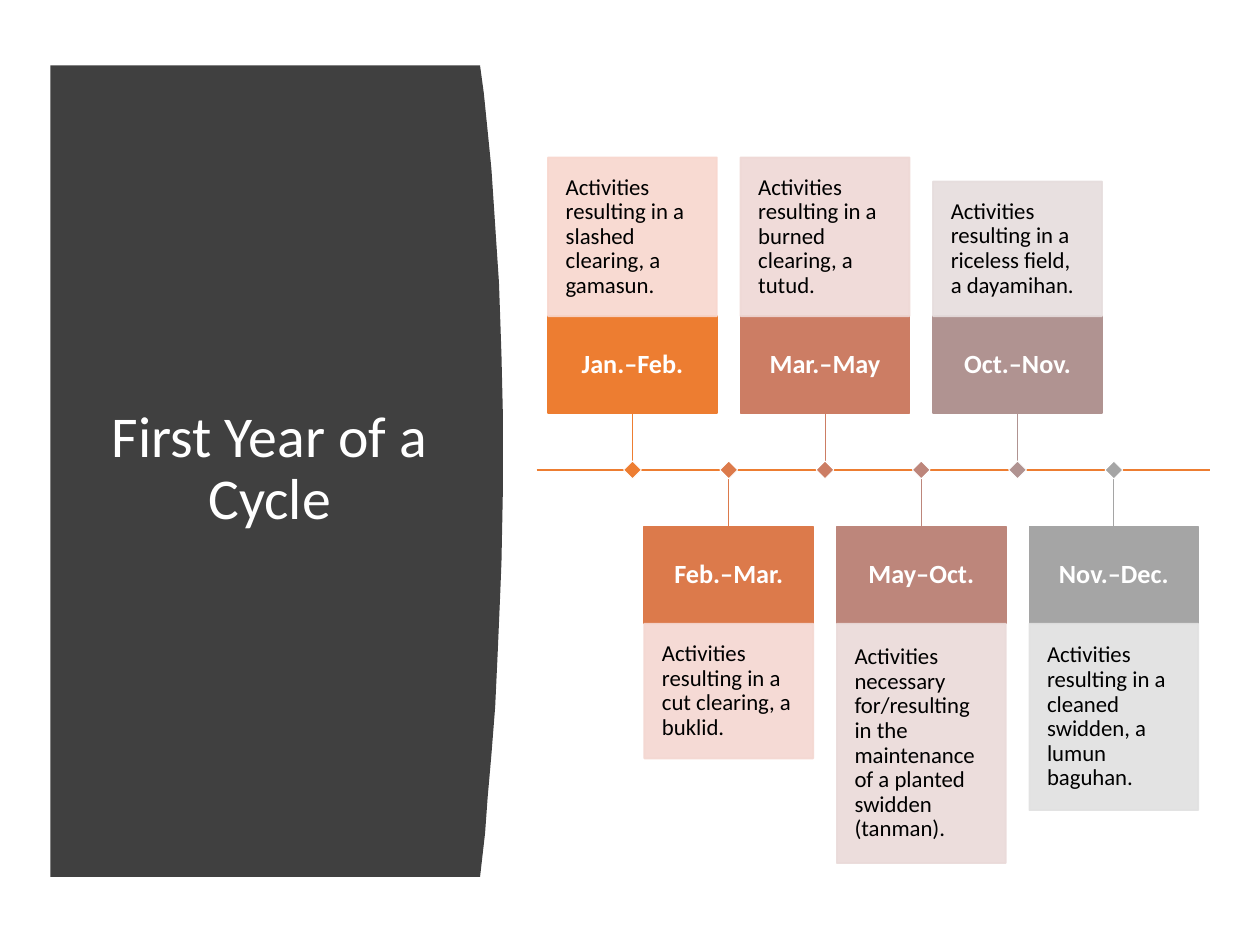
from lxml import etree
from pptx import Presentation
from pptx.dml.color import RGBColor
from pptx.enum.shapes import MSO_CONNECTOR, MSO_SHAPE
from pptx.enum.text import MSO_ANCHOR, PP_ALIGN
from pptx.oxml.ns import qn
from pptx.util import Inches, Pt

RECTANGLE = MSO_SHAPE.RECTANGLE
STRAIGHT = MSO_CONNECTOR.STRAIGHT
MIDDLE = MSO_ANCHOR.MIDDLE
LEFT, CENTER = PP_ALIGN.LEFT, PP_ALIGN.CENTER
TITLE_ONLY = 5
BOTTOM_SIDE, TOP_SIDE = 2, 0

AXIS_Y = 3.73
FIRST_LEFT, LAST_LEFT = 4.35, 8.17
CARD_WIDTH, HEADER_HEIGHT = 1.34, 0.77
UPPER_HEADER_TOP, LOWER_HEADER_TOP = 2.51, 4.18
MARKER_SIZE = 0.1

# period, activity, header colour, body colour, body height
STAGES = [
    ("Jan.–Feb.", "Activities resulting in a slashed clearing, a gamasun.", "ED7D31", "F8D7CE", 1.26),
    ("Feb.–Mar.", "Activities resulting in a cut clearing, a buklid.", "DC7A4B", "F4D7D1", 1.07),
    ("Mar.–May", "Activities resulting in a burned clearing, a tutud.", "CC7D64", "EFD8D5", 1.26),
    ("May–Oct.", "Activities necessary for/resulting in the maintenance of a planted swidden (tanman).",
     "BD867B", "EADAD9", 1.9),
    ("Oct.–Nov.", "Activities resulting in a riceless field, a dayamihan.", "B09391", "E6DDDD", 1.07),
    ("Nov.–Dec.", "Activities resulting in a cleaned swidden, a lumun baguhan.", "A5A5A5", "E1E1E1", 1.48),
]
PANEL_OUTLINE = [
    (0.4, 0.52), (3.81, 0.52), (3.84, 0.74), (3.87, 1.04), (3.9, 1.34), (3.92, 1.64),
    (3.94, 1.94), (3.96, 2.24), (3.97, 2.53), (3.98, 2.82), (3.99, 3.25), (3.99, 3.94),
    (3.98, 4.46), (3.97, 4.71), (3.95, 5.18), (3.93, 5.61), (3.9, 5.99), (3.87, 6.33),
    (3.85, 6.61), (3.81, 6.96), (0.4, 6.96),
]


def color(value):
    return RGBColor.from_string(value)


def write_text(shape, text, size, font_color, align=CENTER, bold=False, inset=0.1):
    frame = shape.text_frame
    frame.word_wrap = True
    frame.vertical_anchor = MIDDLE
    frame.margin_left = frame.margin_right = Inches(inset)
    frame.margin_top = frame.margin_bottom = Inches(inset)
    paragraph = frame.paragraphs[0]
    paragraph.alignment = align
    paragraph.line_spacing = 0.9
    run = paragraph.add_run()
    run.text = text
    run.font.name = "Calibri"
    run.font.size = Pt(size)
    run.font.bold = bold
    run.font.color.rgb = color(font_color)


presentation = Presentation()
presentation.slide_width = Inches(10)
presentation.slide_height = Inches(7.5)
slide = presentation.slides.add_slide(presentation.slide_layouts[TITLE_ONLY])
shapes = slide.shapes

# Title on a dark panel with a curved edge
outline = [(Inches(x), Inches(y)) for x, y in PANEL_OUTLINE]
builder = shapes.build_freeform(*outline[0])
builder.add_line_segments(outline[1:], close=True)
panel = builder.convert_to_shape()
panel.shadow.inherit = False
panel.fill.solid()
panel.fill.fore_color.rgb = color("404040")
panel.line.fill.background()

title = shapes.title
title._element.addprevious(panel._element)
title.left, title.top = Inches(0.71), Inches(1.11)
title.width, title.height = Inches(2.8), Inches(5.24)
write_text(title, "First Year of a Cycle", 33, "FFFFFF")
title.text_frame.paragraphs[0]._p.get_or_add_pPr().set("marL", str(Inches(0.06)))

# Timeline: odd stages above the axis, even stages below it
axis = shapes.add_connector(STRAIGHT, Inches(4.26), Inches(AXIS_Y), Inches(9.6), Inches(AXIS_Y))
connectors = [(axis, "ED7D31", 1)]
rectangles = []
step = (LAST_LEFT - FIRST_LEFT) / (len(STAGES) - 1)

for index, (period, activity, header_color, body_color, body_height) in enumerate(STAGES):
    above = index % 2 == 0
    left = FIRST_LEFT + index * step
    center = left + CARD_WIDTH / 2
    header_top = UPPER_HEADER_TOP if above else LOWER_HEADER_TOP
    body_top = header_top - body_height if above else header_top + HEADER_HEIGHT

    header = shapes.add_shape(RECTANGLE, Inches(left), Inches(header_top),
                              Inches(CARD_WIDTH), Inches(HEADER_HEIGHT))
    write_text(header, period, 15, "FFFFFF", bold=True, inset=0.08)

    body = shapes.add_shape(RECTANGLE, Inches(left), Inches(body_top),
                            Inches(CARD_WIDTH), Inches(body_height))
    write_text(body, activity, 13, "000000", align=LEFT, inset=0.14)

    stem = shapes.add_connector(STRAIGHT, Inches(center), Inches(header_top),
                                Inches(center), Inches(AXIS_Y))
    stem.begin_connect(header, BOTTOM_SIDE if above else TOP_SIDE)
    connectors.append((stem, header_color, 0.5))

    marker = shapes.add_shape(RECTANGLE, Inches(center - MARKER_SIZE / 2),
                              Inches(AXIS_Y - MARKER_SIZE / 2),
                              Inches(MARKER_SIZE), Inches(MARKER_SIZE))
    marker.rotation = 45
    rectangles += [(header, header_color, header_color, 1, 100),
                   (body, body_color, body_color, 1, 90),
                   (marker, header_color, "FFFFFF", 0.5, 100)]

for rectangle, fill_color, line_color, line_width, opacity in rectangles:
    rectangle.shadow.inherit = False
    rectangle.fill.solid()
    rectangle.fill.fore_color.rgb = color(fill_color)
    rectangle.line.color.rgb = color(line_color)
    rectangle.line.width = Pt(line_width)
    if opacity < 100:
        for rgb in rectangle._element.spPr.iter(qn("a:srgbClr")):
            etree.SubElement(rgb, qn("a:alpha")).set("val", str(opacity * 1000))

for connector, line_color, line_width in connectors:
    connector.line.color.rgb = color(line_color)
    connector.line.width = Pt(line_width)
    etree.SubElement(connector._element.spPr, qn("a:effectLst"))

presentation.save("out.pptx")
